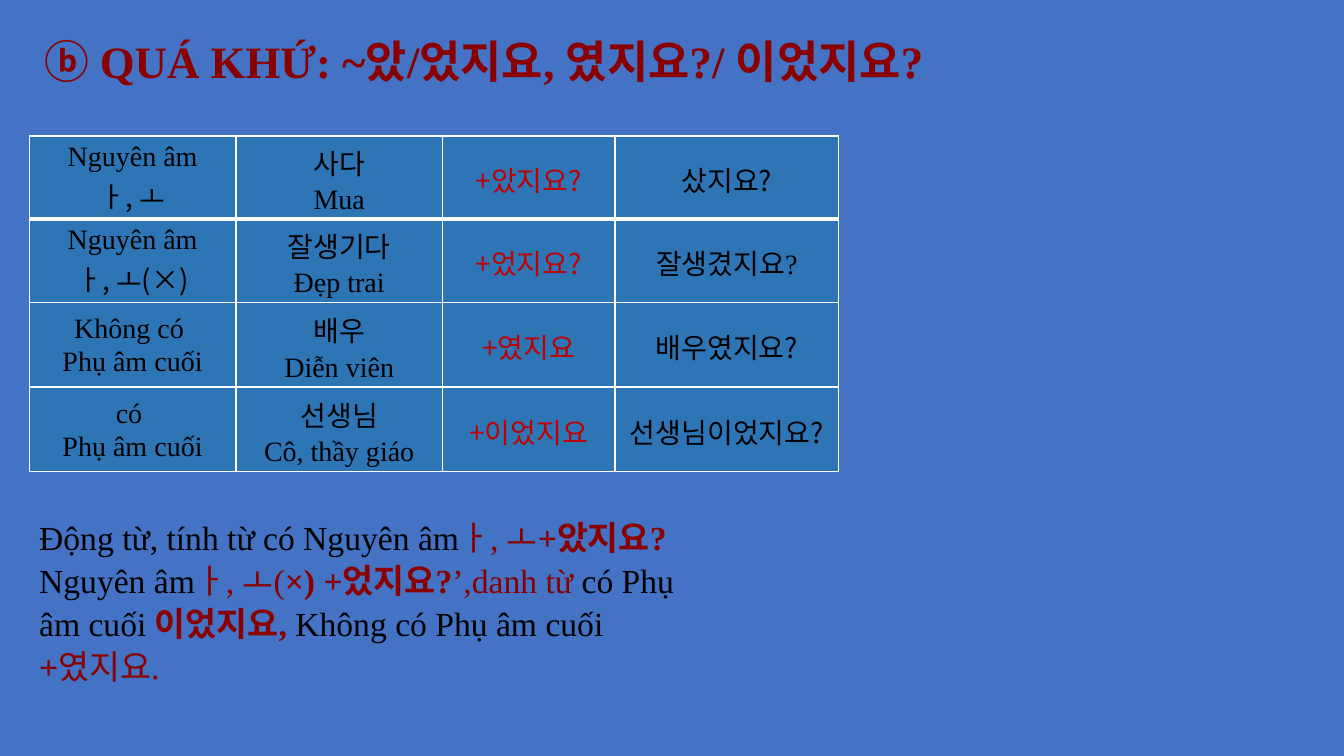
from lxml import etree
from pptx import Presentation
from pptx.dml.color import RGBColor
from pptx.enum.text import MSO_ANCHOR, MSO_AUTO_SIZE, PP_ALIGN
from pptx.oxml.ns import qn
from pptx.util import Inches, Pt

MIDDLE = MSO_ANCHOR.MIDDLE
GROW = MSO_AUTO_SIZE.SHAPE_TO_FIT_TEXT
CENTER, LEFT, JUST = PP_ALIGN.CENTER, PP_ALIGN.LEFT, PP_ALIGN.JUSTIFY

BLUE, CELL, WHITE = "4472C4", "2E75B6", "FFFFFF"
BLACK, DARK, RED = "000000", "8A0000", "C00000"
TIMES, KOREAN = "Times New Roman", "Noto Sans CJK KR"

# Runs: text, format
TITLE = [
    (" ", dict(size=18, font=KOREAN)),
    ("ⓑ ", dict(font=KOREAN, color=DARK, bold=True)),
    ("QUÁ KHỨ: ~았/었지요, 였지요?/ 이었지요?", dict(color=DARK, bold=True)),
]
NOTE = [
    ("Động từ, tính từ có Nguyên âm", {}),
    ("ㅏ, ㅗ", dict(color=DARK)),
    ("+았지요? ", dict(color=DARK, bold=True)),
    ("Nguyên âm", {}),
    ("ㅏ, ㅗ(", dict(color=DARK)),
    ("×) +었지요?", dict(color=DARK, bold=True)),
    ("’,danh từ ", dict(color=DARK)),
    ("có Phụ âm cuối ", {}),
    ("이었지요, ", dict(color=DARK, bold=True)),
    ("Không có Phụ âm cuối ", {}),
    ("+", dict(color=DARK, bold=True)),
    ("였지요.", dict(color=DARK)),
]
# Each cell is a list of lines, each line a list of (text, font)
ROWS = [
    [[[("Nguyên âm", TIMES)], [("ㅏ, ㅗ", KOREAN)]],
     [[("사다", KOREAN)], [("Mua", TIMES)]],
     [[("+았지요?", KOREAN)]],
     [[("샀지요?", KOREAN)]]],
    [[[("Nguyên âm", TIMES)], [("ㅏ, ㅗ(×)", KOREAN)]],
     [[("잘생기다", KOREAN)], [("Đẹp trai", TIMES)]],
     [[("+었지요?", KOREAN)]],
     [[("잘생겼지요", KOREAN), ("?", TIMES)]]],
    [[[("Không có ", TIMES)], [("Phụ âm cuối", TIMES)]],
     [[("배우", KOREAN)], [("Diễn viên", TIMES)]],
     [[("+였지요", KOREAN)]],
     [[("배우였지요?", KOREAN)]]],
    [[[("có ", TIMES)], [("Phụ âm cuối", TIMES)]],
     [[("선생님", KOREAN)], [("Cô, thầy giáo", TIMES)]],
     [[("+이었지요", KOREAN)]],
     [[("선생님이었지요?", KOREAN)]]],
]
WIDTHS = [2.05, 2.05, 1.71, 2.22]
HEIGHTS = [0.82, 0.83, 0.84, 0.84]
EDGE = 0.29


def rgb(code):
    return RGBColor.from_string(code)


def write(para, text, size=20, font=TIMES, color=BLACK, bold=False):
    """Add one run; Hangul always takes the Korean face."""
    run = para.add_run()
    run.text = text
    face = run.font
    face.size, face.bold, face.name = Pt(size), bold, font
    face.color.rgb = rgb(color)
    latin = run._r.get_or_add_rPr().find(qn("a:latin"))
    east = etree.Element(qn("a:ea"), typeface=KOREAN)
    latin.addnext(east)


def setup(para, align, after=0):
    para.alignment = align
    para.line_spacing = 1.07
    para.space_after = Pt(after)


def add_text(slide, runs, box, size, align):
    shape = slide.shapes.add_textbox(*map(Inches, box))
    frame = shape.text_frame
    frame.word_wrap = True
    frame.auto_size = GROW
    para = frame.paragraphs[0]
    setup(para, align, 8)
    for text, look in runs:
        write(para, text, **{"size": size, **look})
    return frame


def border(cell, side, width):
    line = etree.SubElement(cell._tc.get_or_add_tcPr(), qn("a:ln" + side),
                            w=str(Pt(width)))
    fill = etree.SubElement(line, qn("a:solidFill"))
    etree.SubElement(fill, qn("a:srgbClr"), val=WHITE)


def fill_cell(cell, lines, row, col):
    # Borders must precede the fill in the cell properties
    for side in "LRTB":
        thick = (row, side) in ((0, "B"), (1, "T"))
        border(cell, side, 3 if thick else 1)
    cell.fill.solid()
    cell.fill.fore_color.rgb = rgb(CELL)
    cell.vertical_anchor = MIDDLE
    cell.margin_left = cell.margin_right = Inches(0.07)
    cell.margin_top = cell.margin_bottom = 0
    frame = cell.text_frame
    for i, line in enumerate(lines):
        para = frame.add_paragraph() if i else frame.paragraphs[0]
        setup(para, CENTER)
        for text, font in line:
            write(para, text, font=font, color=RED if col == 2 else BLACK)


def add_grid(slide, left, top):
    grid = slide.shapes.add_table(
        len(HEIGHTS), len(WIDTHS), Inches(left), Inches(top),
        Inches(sum(WIDTHS)), Inches(sum(HEIGHTS))).table
    for col, width in zip(grid.columns, WIDTHS):
        col.width = Inches(width)
    for row, height in zip(grid.rows, HEIGHTS):
        row.height = Inches(height)
    for r, cells in enumerate(ROWS):
        for c, lines in enumerate(cells):
            fill_cell(grid.cell(r, c), lines, r, c)


def main():
    deck = Presentation()
    deck.slide_width, deck.slide_height = Inches(13.33), Inches(7.5)
    slide = deck.slides.add_slide(deck.slide_layouts[6])
    slide.background.fill.solid()
    slide.background.fill.fore_color.rgb = rgb(BLUE)
    title = add_text(slide, TITLE, (EDGE, 0.25, 10.02, 0.63), 32, JUST)
    title.margin_right = 0
    add_grid(slide, EDGE, 1.35)
    add_text(slide, NOTE, (EDGE, 5.05, 6.67, 1.83), 24, LEFT)
    deck.save("out.pptx")


if __name__ == "__main__":
    main()
